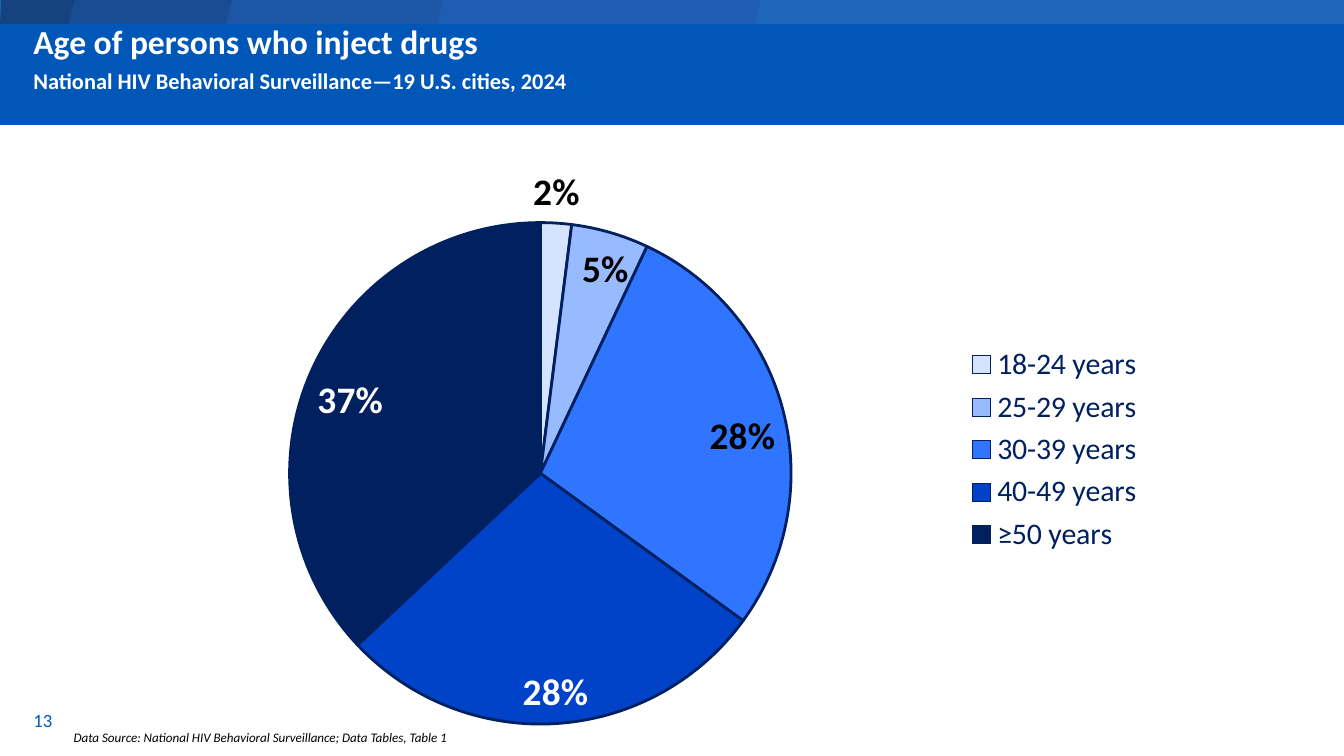
from dataclasses import dataclass

import lxml.etree
import pptx
import pptx.chart.data
import pptx.dml.color
import pptx.enum.chart
import pptx.enum.shapes
import pptx.enum.text
import pptx.oxml.ns
import pptx.util

Inches = pptx.util.Inches
Pt = pptx.util.Pt
RGBColor = pptx.dml.color.RGBColor
MSO_SHAPE = pptx.enum.shapes.MSO_SHAPE
LabelPosition = pptx.enum.chart.XL_LABEL_POSITION
qn = pptx.oxml.ns.qn

FONT = "Calibri"
WHITE = RGBColor(0xFF, 0xFF, 0xFF)
BLACK = RGBColor(0, 0, 0)
NAVY = RGBColor(0x00, 0x20, 0x60)
HEADER_BLUE = RGBColor(0x00, 0x57, 0xB7)
STRIP_BLUE = RGBColor(0x1E, 0x66, 0xB8)
STRIP_DARKEST = RGBColor(0x16, 0x43, 0x80)
STRIP_DARK = RGBColor(0x19, 0x4D, 0x93)
STRIP_MEDIUM = RGBColor(0x1C, 0x56, 0xA4)
STRIP_LIGHT = RGBColor(0x1E, 0x5D, 0xB2)
AGE_PALEST = RGBColor(0xD6, 0xE3, 0xFF)
AGE_PALE = RGBColor(0x98, 0xBA, 0xFF)
AGE_BRIGHT = RGBColor(0x30, 0x75, 0xFF)
AGE_DEEP = RGBColor(0x00, 0x42, 0xC8)

STRIP_HEIGHT = 0.19


@dataclass(frozen=True)
class Band:
    preset: MSO_SHAPE
    left: float
    top: float
    width: float
    height: float
    color: RGBColor


@dataclass(frozen=True)
class Line:
    text: str
    size: float
    color: RGBColor
    bold: bool = False
    italic: bool = False
    space_before: float = 0


@dataclass(frozen=True)
class AgeGroup:
    name: str
    share: float
    fill: RGBColor
    label_color: RGBColor
    label_position: LabelPosition = LabelPosition.INSIDE_END
    label_shift: tuple[float, float] | None = None


BANDS = [
    Band(MSO_SHAPE.PARALLELOGRAM, 0.51, 0, 1.53, STRIP_HEIGHT, STRIP_DARK),
    Band(MSO_SHAPE.PARALLELOGRAM, 1.68, 0, 2, STRIP_HEIGHT, STRIP_MEDIUM),
    Band(MSO_SHAPE.PARALLELOGRAM, 3.25, 0, 2.41, STRIP_HEIGHT, STRIP_LIGHT),
    Band(MSO_SHAPE.RECTANGLE, 0, 0.18, 10, 0.75, HEADER_BLUE),
]

AGE_GROUPS = [
    AgeGroup("18-24 years", 0.02, AGE_PALEST, BLACK, LabelPosition.OUTSIDE_END),
    AgeGroup("25-29 years", 0.05, AGE_PALE, BLACK, label_shift=(0.02, 0.01)),
    AgeGroup("30-39 years", 0.28, AGE_BRIGHT, BLACK),
    AgeGroup("40-49 years", 0.28, AGE_DEEP, WHITE),
    AgeGroup("≥50 years", 0.37, NAVY, WHITE),
]


def paint(shape, color: RGBColor) -> None:
    shape.shadow.inherit = False
    shape.fill.solid()
    shape.fill.fore_color.rgb = color
    shape.line.fill.background()


def draw_band(slide, band: Band) -> None:
    shape = slide.shapes.add_shape(
        band.preset, Inches(band.left), Inches(band.top), Inches(band.width), Inches(band.height)
    )
    paint(shape, band.color)


def draw_strip_end(slide) -> None:
    outline = slide.shapes.build_freeform(0, Inches(STRIP_HEIGHT))
    corners = [(0.01, 0), (0.8, 0), (0.74, STRIP_HEIGHT)]
    outline.add_line_segments([(Inches(x), Inches(y)) for x, y in corners])
    paint(outline.convert_to_shape(), STRIP_DARKEST)


def style_font(font, size: float, color: RGBColor, bold: bool = False, italic: bool = False) -> None:
    font.name = FONT
    font.size = Pt(size)
    font.color.rgb = color
    font.bold = bold
    font.italic = italic


def draw_text(slide, left: float, top: float, width: float, height: float, lines: list[Line],
              anchor=pptx.enum.text.MSO_ANCHOR.TOP) -> None:
    frame = slide.shapes.add_textbox(
        Inches(left), Inches(top), Inches(width), Inches(height)
    ).text_frame
    frame.word_wrap = True
    frame.vertical_anchor = anchor
    for index, line in enumerate(lines):
        paragraph = frame.add_paragraph() if index else frame.paragraphs[0]
        paragraph.text = line.text
        if line.space_before:
            paragraph.space_before = Pt(line.space_before)
        style_font(paragraph.font, line.size, line.color, line.bold, line.italic)


def set_layout(parent, index: int, settings: dict[str, str | float]) -> None:
    for existing in parent.findall(qn("c:layout")):
        parent.remove(existing)
    layout = lxml.etree.Element(qn("c:layout"))
    manual = lxml.etree.SubElement(layout, qn("c:manualLayout"))
    for tag, value in settings.items():
        lxml.etree.SubElement(manual, qn(f"c:{tag}")).set("val", str(value))
    parent.insert(index, layout)


def draw_age_chart(slide) -> None:
    ages = pptx.chart.data.CategoryChartData(number_format="0%")
    ages.categories = [group.name for group in AGE_GROUPS]
    ages.add_series("Series 1", [group.share for group in AGE_GROUPS])
    chart = slide.shapes.add_chart(
        pptx.enum.chart.XL_CHART_TYPE.PIE,
        Inches(0.89), Inches(1.13), Inches(7.73), Inches(4.39), ages,
    ).chart
    chart.has_title = False
    chart.font.name = FONT
    chart.font.size = Pt(10)

    chart.has_legend = True
    legend = chart.legend
    legend.position = pptx.enum.chart.XL_LEGEND_POSITION.RIGHT
    legend.include_in_layout = False
    style_font(legend.font, 16, NAVY)

    plot = chart.plots[0]
    plot.vary_by_categories = True
    plot.has_data_labels = True
    labels = plot.data_labels
    labels.show_value = True
    labels.show_percentage = False
    labels.number_format = "0%"
    labels.number_format_is_linked = False
    style_font(labels.font, 20, BLACK, bold=True)

    for index, group in enumerate(AGE_GROUPS):
        point = plot.series[0].points[index]
        point.format.fill.solid()
        point.format.fill.fore_color.rgb = group.fill
        point.format.line.color.rgb = NAVY
        point.format.line.width = Pt(1.5)
        style_font(point.data_label.font, 20, group.label_color, bold=True)
        point.data_label.position = group.label_position
        if group.label_shift:
            x, y = group.label_shift
            label = chart.element.findall(f".//{qn('c:dLbl')}")[index]
            set_layout(label, 1, {"x": x, "y": y})

    edges = {"xMode": "edge", "yMode": "edge"}
    plot_area = chart.element.find(f".//{qn('c:plotArea')}")
    set_layout(plot_area, 0, {"layoutTarget": "inner", **edges,
                              "x": 0.16, "y": 0.12, "w": 0.49, "h": 0.85})
    legend_element = chart.element.find(f".//{qn('c:legend')}")
    set_layout(legend_element, 1, {**edges, "x": 0.81, "y": 0.32, "w": 0.18, "h": 0.37})


def main() -> None:
    deck = pptx.Presentation()
    deck.slide_width = Inches(10)
    deck.slide_height = deck.slide_width * 9 // 16
    slide = deck.slides.add_slide(deck.slide_layouts[6])

    draw_band(slide, Band(MSO_SHAPE.RECTANGLE, 0, 0, 10, STRIP_HEIGHT, STRIP_BLUE))
    draw_strip_end(slide)
    for band in BANDS:
        draw_band(slide, band)

    draw_text(slide, 0.15, 0.11, 7.56, 0.44, [
        Line("Age of persons who inject drugs", 18, WHITE, bold=True),
        Line("National HIV Behavioral Surveillance—19 U.S. cities, 2024", 12, WHITE,
             bold=True, space_before=3),
    ])
    draw_age_chart(slide)
    draw_text(slide, 0.15, 5.21, 2.25, 0.3, [Line("13", 10, HEADER_BLUE)],
              pptx.enum.text.MSO_ANCHOR.MIDDLE)
    draw_text(slide, 0.45, 5.38, 3.17, 0.22, [
        Line("Data Source: National HIV Behavioral Surveillance; Data Tables, Table 1", 7, BLACK,
             italic=True),
    ])
    deck.save("out.pptx")


if __name__ == "__main__":
    main()
